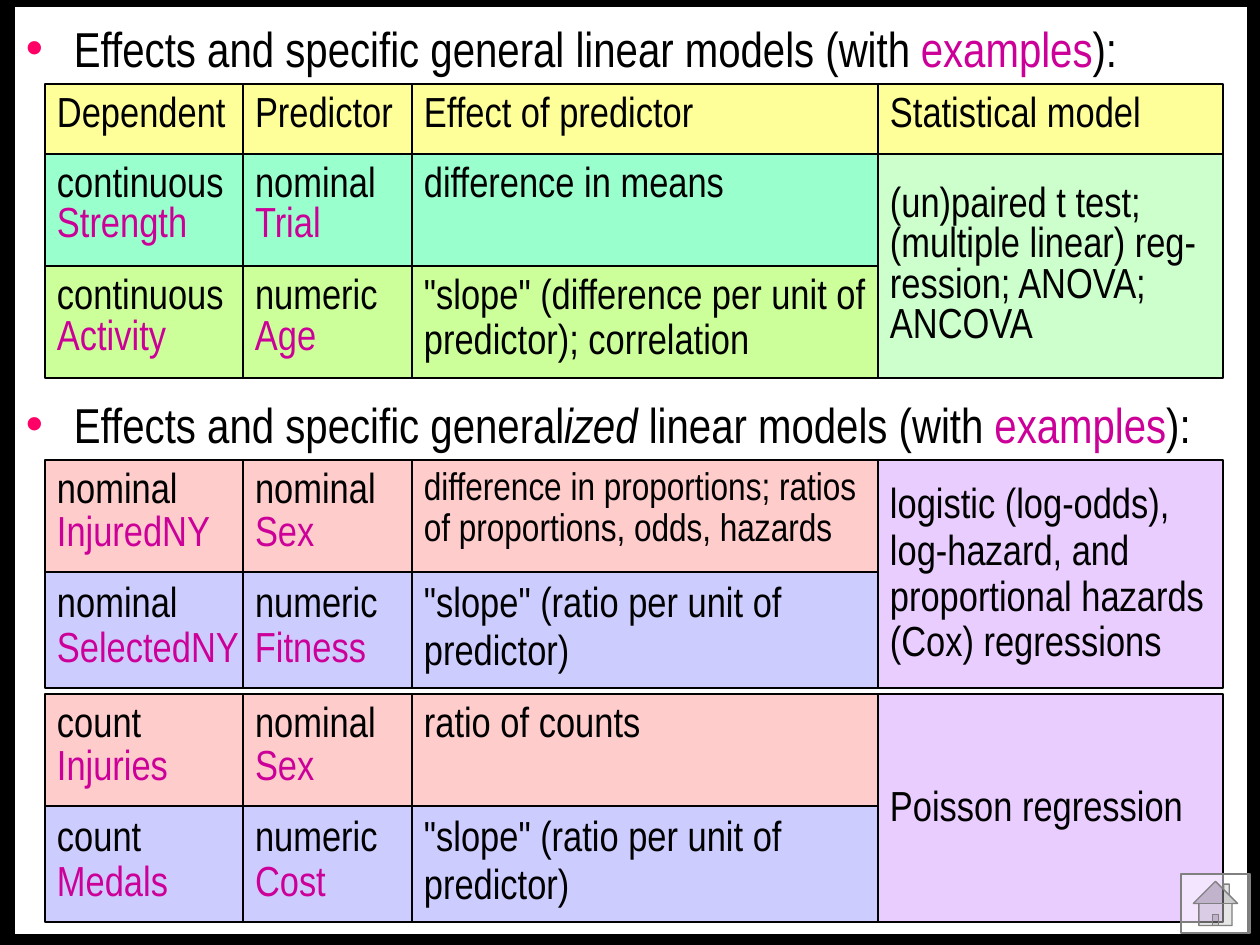
from pptx import Presentation
from pptx.dml.color import RGBColor
from pptx.enum.shapes import MSO_SHAPE as Shape
from pptx.enum.text import MSO_ANCHOR as Anchor, MSO_AUTO_SIZE as AutoSize, PP_ALIGN as Align
from pptx.oxml.ns import qn
from pptx.util import Emu, Pt
from lxml.etree import SubElement

PX = 914400 / 126
COLORS = {
    "black": "000000", "white": "FFFFFF", "example": "CC0099", "bullet": "FF0066",
    "header": "FFFF99", "mint": "99FFCC", "lime": "CCFF99", "pale green": "CCFFCC",
    "pink": "FFCCCC", "blue": "CCCCFF", "lilac": "EACDFF", "grey": "808080",
}


def box(left, top, width, height, fill=None, line="black", kind=Shape.RECTANGLE):
    """Add a filled shape, or a plain text box when no fill is given; lengths in px."""
    place = [Emu(round(n * PX)) for n in (left, top, width, height)]
    if fill is None:
        return slide.shapes.add_textbox(*place)
    shape = slide.shapes.add_shape(kind, *place)
    shape.shadow.inherit = False
    shape.fill.solid()
    shape.fill.fore_color.rgb = RGBColor.from_string(COLORS[fill])
    shape.line.color.rgb = RGBColor.from_string(COLORS[line])
    shape.line.width = Pt(0.75)
    return shape


def write(shape, paragraphs, size=24, spacing=None, before=0, anchor=Anchor.TOP,
          insets=(12, 7, 12, 7), wrap=True):
    """Fill a shape with paragraphs, each a list of (text, color, italic) runs."""
    frame = shape.text_frame
    frame.word_wrap = wrap
    frame.auto_size = AutoSize.NONE if wrap else AutoSize.SHAPE_TO_FIT_TEXT
    frame.vertical_anchor = anchor
    (frame.margin_left, frame.margin_top,
     frame.margin_right, frame.margin_bottom) = [Emu(round(n * PX)) for n in insets]
    for i, runs in enumerate(paragraphs):
        paragraph = frame.paragraphs[0] if i == 0 else frame.add_paragraph()
        paragraph.alignment = Align.LEFT
        paragraph.space_before = Pt(before)
        if spacing:
            paragraph.line_spacing = spacing
        for text, color, italic in runs:
            run = paragraph.add_run()
            run.text = text
            run.font.name = "Arial Narrow"
            run.font.size = Pt(size)
            run.font.italic = italic
            run.font.color.rgb = RGBColor.from_string(COLORS[color])


deck = Presentation()
deck.slide_width, deck.slide_height = Emu(round(1260 * PX)), Emu(round(945 * PX))
slide = deck.slides.add_slide(deck.slide_layouts[6])
slide.background.fill.solid()
slide.background.fill.fore_color.rgb = RGBColor.from_string(COLORS["black"])

# White panel with the two headings
panel = box(14, 6, 1234, 929, "white")
ending = [("examples", "example", False), ("):", "black", False)]
write(panel, [
    [("Effects and specific general linear models (with ", "black", False)] + ending,
    [("Effects and specific general", "black", False), ("ized", "black", True),
     (" linear models (with ", "black", False)] + ending,
], size=28, before=1.4, insets=(12, 12, 12, 6))
general, generalized = panel.text_frame.paragraphs
generalized.space_before = Pt(181.3)
for heading in (general, generalized):
    properties = heading._p.get_or_add_pPr()
    properties.set("marL", str(round(48 * PX)))
    properties.set("indent", str(round(-48 * PX)))
    color = SubElement(properties, qn("a:buClr"))
    SubElement(color, qn("a:srgbClr")).set("val", COLORS["bullet"])
    SubElement(properties, qn("a:buFont")).set("typeface", "Arial")
    SubElement(properties, qn("a:buChar")).set("char", "•")

# Statistical models, each spanning the rows it serves: top, height, fill, spacing, lines
MODEL_LEFT, MODEL_WIDTH = 878, 345
models = [
    (154, 224, "pale green", 0.8,
     ["(un)paired t test; (multiple linear) reg-ression; ANOVA; ANCOVA"]),
    (460, 228, "lilac", 0.9,
     ["logistic (log-odds),", "log-hazard, and proportional hazards (Cox) regressions"]),
    (694, 228, "lilac", 0.9, ["Poisson regression"]),
]
for top, height, fill, spacing, lines in models:
    write(box(MODEL_LEFT, top, MODEL_WIDTH, height, fill),
          [[(line, "black", False)] for line in lines],
          spacing=spacing, before=1.2, anchor=Anchor.MIDDLE)
write(box(MODEL_LEFT, 84, MODEL_WIDTH, 70, "header"),
      [[("Statistical model", "black", False)]], spacing=0.9, before=1.2)

# Rows: top, height, fill, spacing, effect size, cells, example drop, examples with widths
columns = [(45, 198), (243, 169), (412, 466)]
ratio = '"slope" (ratio per unit of predictor)'
rows = [
    (84, 70, "header", 0.9, 24, ["Dependent", "Predictor", "Effect of predictor"], 0, []),
    (154, 112, "mint", 0.9, 24, ["continuous", "nominal", "difference in means"],
     35, [("Strength", 156), ("Trial", 92)]),
    (266, 112, "lime", 0.9, 24,
     ["continuous", "numeric", '"slope" (difference per unit of predictor); correlation'],
     36, [("Activity", 135), ("Age", 87)]),
    (460, 112, "pink", 0.9, 22,
     ["nominal", "nominal", "difference in proportions; ratios of proportions, odds, hazards"],
     38, [("InjuredNY", 179), ("Sex", 84)]),
    (572, 116, "blue", 0.95, 24, ["nominal", "numeric", ratio],
     42, [("SelectedNY", 208), ("Fitness", 137)]),
    (694, 112, "pink", 0.9, 24, ["count", "nominal", "ratio of counts"],
     38, [("Injuries", 137), ("Sex", 84)]),
    (806, 116, "blue", 0.95, 24, ["count", "numeric", ratio],
     42, [("Medals", 137), ("Cost", 97)]),
]
for top, height, fill, spacing, effect_size, cells, drop, examples in rows:
    for column, ((left, width), label) in enumerate(zip(columns, cells)):
        is_effect = column == 2
        right_inset = 3 if is_effect and fill in ("pink", "lime") else 12
        write(box(left, top, width, height, fill), [[(label, "black", False)]],
              size=effect_size if is_effect else 24, spacing=spacing, before=1.2,
              insets=(12, 7, right_inset, 7))
    for (left, _), (example, width) in zip(columns, examples):
        write(box(left, top + drop, width, 63), [[(example, "example", False)]],
              insets=(12, 7, 0, 6), wrap=False)

home = box(1181, 874, 69, 59, "white", "grey", Shape.ACTION_BUTTON_HOME)
tint = home.fill._xPr.find(qn("a:solidFill"))[0]
SubElement(tint, qn("a:alpha")).set("val", "49000")

deck.save("out.pptx")
